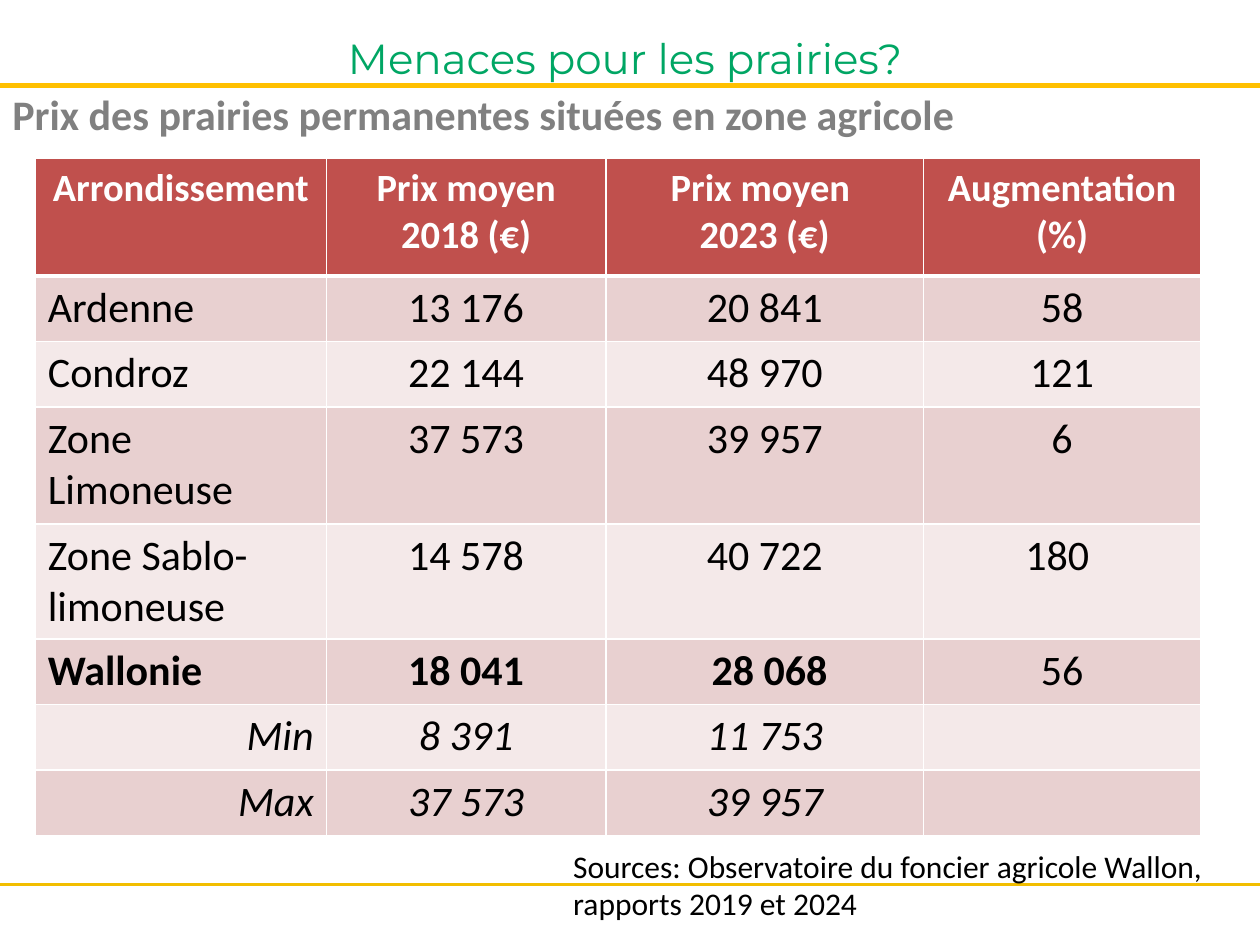
from dataclasses import dataclass

from lxml import etree
from pptx import Presentation
from pptx.dml.color import RGBColor
from pptx.enum.shapes import MSO_CONNECTOR
from pptx.enum.text import MSO_ANCHOR, PP_ALIGN
from pptx.oxml.ns import qn
from pptx.util import Inches, Pt

LEFT, MID, RIGHT = PP_ALIGN.LEFT, PP_ALIGN.CENTER, PP_ALIGN.RIGHT
CENTRE, TOP = MSO_ANCHOR.MIDDLE, MSO_ANCHOR.TOP
STRAIGHT = MSO_CONNECTOR.STRAIGHT


@dataclass(frozen=True)
class Theme:
    body: str = "Calibri"
    head: str = "Montserrat"
    green: str = "00A664"
    gold: str = "FFC000"
    amber: str = "F2BE00"
    grey: str = "808080"
    black: str = "000000"
    white: str = "FFFFFF"
    red: str = "C0504D"
    rose: str = "E8D0D0"
    pale: str = "F4E9E9"
    large: int = 24
    label: int = 22
    small: int = 18


THEME = Theme()
WIDTHS = [2.31, 2.22, 2.52, 2.2]
HEIGHTS = [0.93, 0.52, 0.52, 0.93, 0.91, 0.52, 0.52, 0.52]
HEADS = ["Arrondissement", "Prix moyen 2018 (€)", "Prix moyen \n2023 (€)", "Augmentation (%)"]
ROWS = [
    ["Ardenne", "13 176", "20 841", "58"],
    ["Condroz", "22 144", "48 970", "121"],
    ["Zone Limoneuse", "37 573", "39 957", "6"],
    ["Zone Sablo-limoneuse", "14 578", "40 722", "180 "],
    ["Wallonie", "18 041", " 28 068", "56"],
    ["Min", "8 391", "11 753", ""],
    ["Max", "37 573", "39 957", ""],
]


def write(frame, text, size, color, align=LEFT, font=THEME.body, bold=False, italic=False):
    for i, line in enumerate(text.split("\n")):
        para = frame.add_paragraph() if i else frame.paragraphs[0]
        para.alignment = align
        run = para.add_run()
        run.text = line
        run.font.name = font
        run.font.size = Pt(size)
        run.font.bold = bold
        run.font.italic = italic
        run.font.color.rgb = RGBColor.from_string(color)


def add_rule(slide, top, color, weight):
    line = slide.shapes.add_connector(STRAIGHT, 0, Inches(top), Inches(10), Inches(top))
    line.line.color.rgb = RGBColor.from_string(color)
    line.line.width = Pt(weight)
    etree.SubElement(line._element.spPr, qn("a:effectLst"))


def add_title(slide, box, text):
    title = slide.shapes.title
    title.left, title.top, title.width, title.height = map(Inches, box)
    title.text_frame.vertical_anchor = CENTRE
    write(title.text_frame, text, THEME.large, THEME.green, MID, THEME.head)


def add_note(slide, box, text, size, color, bold=False):
    frame = slide.shapes.add_textbox(*map(Inches, box)).text_frame
    frame.word_wrap = True
    write(frame, text, size, color, bold=bold)


def edge(cell, weights):
    props = cell._tc.get_or_add_tcPr()
    for i, (side, weight) in enumerate(zip("LRTB", weights)):
        line = etree.Element(qn("a:ln" + side), w=str(Pt(weight)))
        fill = etree.SubElement(line, qn("a:solidFill"))
        etree.SubElement(fill, qn("a:srgbClr"), val=THEME.white)
        props.insert(i, line)


def style(row, col):
    if row == 0:
        return dict(size=THEME.label, color=THEME.white, align=MID, bold=True)
    total, bound = row == 5, row > 5
    align = MID if col else RIGHT if bound else LEFT
    return dict(size=THEME.large, color=THEME.black, align=align,
                bold=total and col < 3, italic=bound)


def add_prices(slide, box):
    data = [HEADS] + ROWS
    table = slide.shapes.add_table(len(data), len(HEADS), *map(Inches, box)).table
    for col, width in zip(table.columns, WIDTHS):
        col.width = Inches(width)
    for r, (row, height) in enumerate(zip(data, HEIGHTS)):
        table.rows[r].height = Inches(height)
        shade = THEME.red if r == 0 else THEME.rose if r % 2 else THEME.pale
        for c, text in enumerate(row):
            cell = table.cell(r, c)
            cell.vertical_anchor = TOP
            cell.fill.solid()
            cell.fill.fore_color.rgb = RGBColor.from_string(shade)
            edge(cell, (1, 1, 3 if r == 1 else 1, 3 if r == 0 else 1))
            if text:
                write(cell.text_frame, text, **style(r, c))


def main():
    deck = Presentation()
    deck.slide_width, deck.slide_height = Inches(10), Inches(7.5)
    slide = deck.slides.add_slide(deck.slide_layouts[5])
    add_rule(slide, 0.68, THEME.gold, 3)
    add_rule(slide, 7.02, THEME.amber, 2)
    add_title(slide, (0.28, 0.15, 9.45, 0.61), "Menaces pour les prairies? ")
    add_prices(slide, (0.28, 1.26, sum(WIDTHS), sum(HEIGHTS)))
    add_note(slide, (4.45, 6.67, 5.28, 0.71),
             "Sources: Observatoire du foncier agricole Wallon, rapports 2019 et 2024",
             THEME.small, THEME.black)
    add_note(slide, (0, 0.65, 8.35, 0.5),
             "Prix des prairies permanentes situées en zone agricole",
             THEME.large, THEME.grey, bold=True)
    deck.save("out.pptx")


if __name__ == "__main__":
    main()
